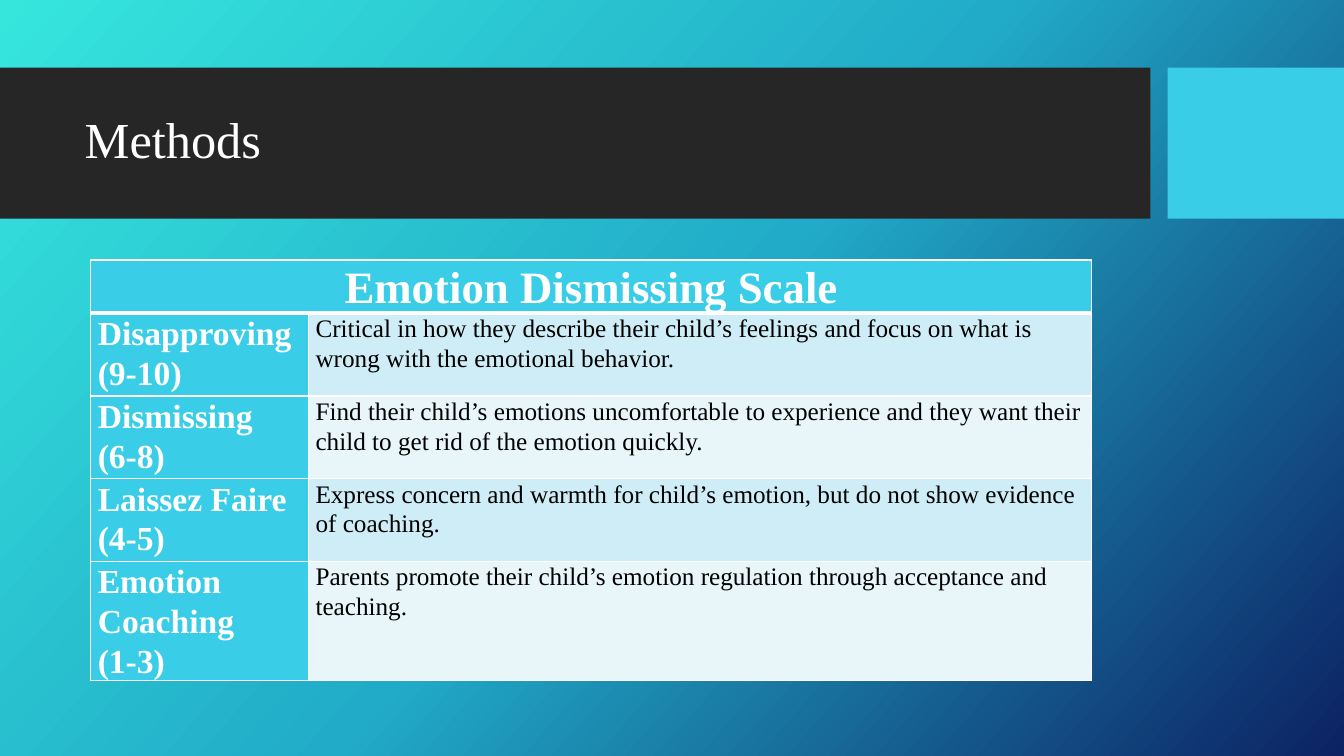
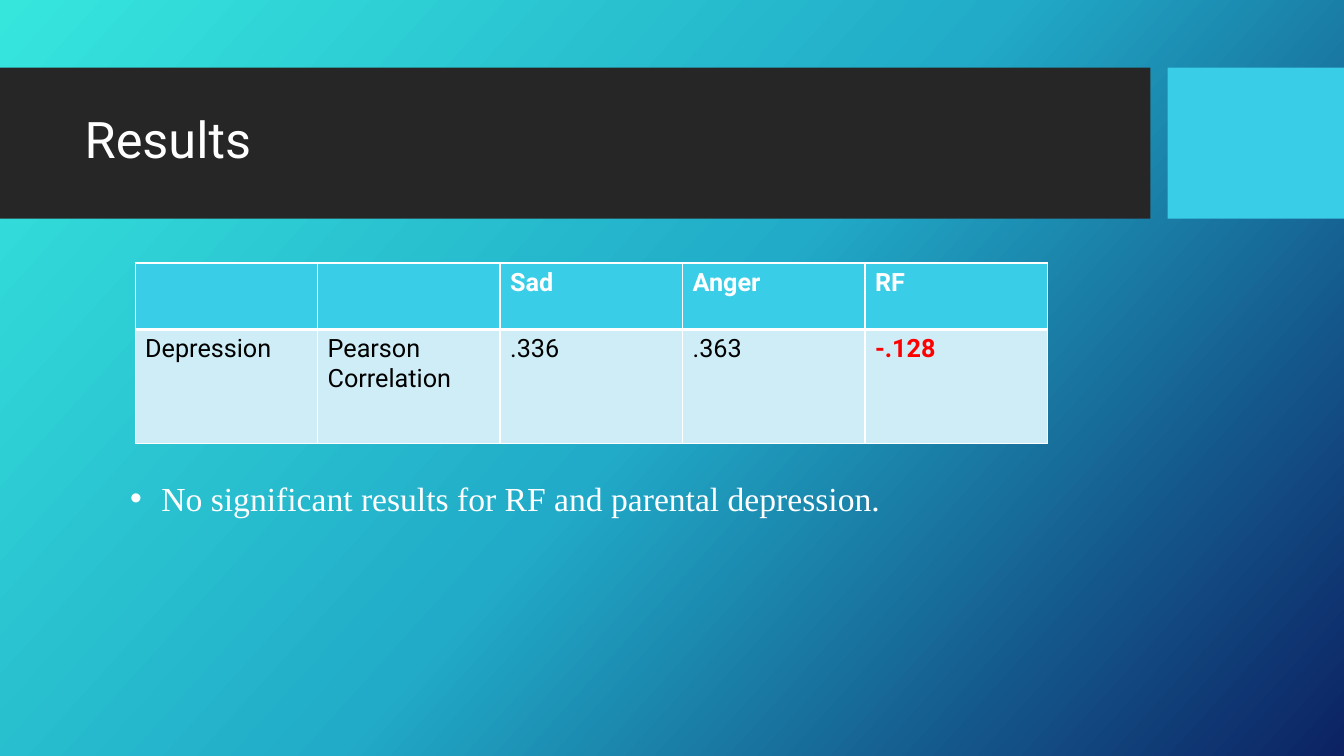
import copy
from dataclasses import dataclass
from typing import Any, Optional

import lxml.etree
import pptx
import pptx.dml.color
import pptx.enum.shapes
import pptx.enum.text
import pptx.oxml.ns
import pptx.util

Inches = pptx.util.Inches
qn = pptx.oxml.ns.qn

SERIF = "Times New Roman"
SANS = "Roboto"
WHITE = "FFFFFF"
BLACK = "000000"
RED = "FF0000"
CHARCOAL = "262626"
CYAN = "39CDE7"
ROW_TINTS = ("CEEDF6", "E8F6FA")
GRADIENT = ((0, "36E6DD"), (0.5, "21ABC8"), (1, "0C2263"))
GRADIENT_ANGLE = 42
TITLE_ONLY = 5
TITLE_AND_CONTENT = 1
THIN, THICK = 1, 3


@dataclass(frozen=True)
class Box:
    left: float
    top: float
    width: float
    height: float

    def lengths(self) -> tuple[int, ...]:
        return tuple(Inches(n) for n in (self.left, self.top, self.width, self.height))


@dataclass(frozen=True)
class Band:
    box: Box
    color: str


@dataclass(frozen=True)
class TextStyle:
    font: str
    size: float
    color: str
    bold: bool = False
    line_spacing: Optional[float] = None
    centered: bool = False


@dataclass(frozen=True)
class Cell:
    text: str
    style: TextStyle
    fill: str


@dataclass(frozen=True)
class Grid:
    box: Box
    columns: tuple[float, ...]
    rows: tuple[float, ...]
    cells: list[list[Cell]]
    margins: tuple[float, float] = (0.1, 0.05)
    merge_header: bool = False


BANDS = (
    Band(Box(0, 0.67, 11.41, 1.5), CHARCOAL),
    Band(Box(11.58, 0.67, 1.75, 1.5), CYAN),
)
TITLE_BOX = Box(0.74, 0.82, 10.51, 1.18)

SCALE_HEADER = TextStyle(SERIF, 32, WHITE, True, 1.07, True)
SCALE_LABEL = TextStyle(SERIF, 24, WHITE, True, 1.07)
SCALE_BODY = TextStyle(SERIF, 18, BLACK, line_spacing=1.07)
RESULT_HEADER = TextStyle(SANS, 18, WHITE, True)
RESULT_BODY = TextStyle(SANS, 18, BLACK)
RESULT_NEGATIVE = TextStyle(SANS, 18, RED, True)
FINDING = TextStyle(SERIF, 24, WHITE)

SCALE_LEVELS = (
    ("Disapproving\n(9-10)",
     "Critical in how they describe their child’s feelings and focus on what is "
     "wrong with the emotional behavior."),
    ("Dismissing\n(6-8)",
     "Find their child’s emotions uncomfortable to experience and they want their "
     "child to get rid of the emotion quickly."),
    ("Laissez Faire\n(4-5)",
     "Express concern and warmth for child’s emotion, but do not show evidence "
     "of coaching."),
    ("Emotion Coaching\n(1-3)",
     "Parents promote their child’s emotion regulation through acceptance and "
     "teaching."),
)
RESULT_COLUMNS = ("", "", "Sad", "Anger", "RF")
RESULT_VALUES = ("Depression", "Pearson Correlation", ".336", ".363", "-.128")


def rgb(color: str) -> pptx.dml.color.RGBColor:
    return pptx.dml.color.RGBColor.from_string(color)


def format_para(para: Any, style: TextStyle) -> None:
    align = pptx.enum.text.PP_ALIGN
    para.alignment = align.CENTER if style.centered else align.LEFT
    para.space_before = pptx.util.Pt(0)
    if style.line_spacing:
        para.line_spacing = style.line_spacing
    para.font.name = style.font
    para.font.size = pptx.util.Pt(style.size)
    para.font.bold = style.bold
    para.font.color.rgb = rgb(style.color)


def place(shape: Any, box: Box) -> None:
    shape.left, shape.top, shape.width, shape.height = box.lengths()


def paint_background(master: Any) -> None:
    fill = master.background.fill
    fill.gradient()
    fill.gradient_angle = 360 - GRADIENT_ANGLE
    stop_list = master.element.find(".//" + qn("a:gsLst"))
    stop_list.insert(1, copy.deepcopy(stop_list[0]))
    for stop, (position, color) in zip(fill.gradient_stops, GRADIENT):
        stop.position = position
        stop.color.rgb = rgb(color)


def move_bands_to_master(page: Any, master: Any) -> None:
    tree = master.shapes.element if hasattr(master.shapes, "element") else master.shapes._spTree
    for index, band in enumerate(BANDS):
        shape = page.shapes.add_shape(
            pptx.enum.shapes.MSO_SHAPE.RECTANGLE, *band.box.lengths())
        shape.shadow.inherit = False
        shape.fill.solid()
        shape.fill.fore_color.rgb = rgb(band.color)
        shape.line.fill.background()
        shape.element.nvSpPr.cNvPr.id = 20 + index
        tree.insert(2 + index, shape.element)


def add_page(deck: Any, layout: int, title: str, font: str) -> Any:
    page = deck.slides.add_slide(deck.slide_layouts[layout])
    heading = page.shapes.title
    place(heading, TITLE_BOX)
    frame = heading.text_frame
    frame.text = title
    frame.vertical_anchor = pptx.enum.text.MSO_ANCHOR.MIDDLE
    frame.auto_size = pptx.enum.text.MSO_AUTO_SIZE.NONE
    format_para(frame.paragraphs[0], TextStyle(font, 36, WHITE, line_spacing=0.9))
    return page


def set_borders(cell: Any, row: int) -> None:
    properties = cell._tc.get_or_add_tcPr()
    widths = {
        "L": THIN,
        "R": THIN,
        "T": THICK if row == 1 else THIN,
        "B": THICK if row == 0 else THIN,
    }
    for side, width in widths.items():
        line = lxml.etree.SubElement(
            properties, qn(f"a:ln{side}"), w=str(pptx.util.Pt(width)))
        solid = lxml.etree.SubElement(line, qn("a:solidFill"))
        lxml.etree.SubElement(solid, qn("a:srgbClr"), val=WHITE)


def fill_cell(target: Any, cell: Cell, row: int, margins: tuple[float, float]) -> None:
    set_borders(target, row)
    target.fill.solid()
    target.fill.fore_color.rgb = rgb(cell.fill)
    target.margin_left = target.margin_right = Inches(margins[0])
    target.margin_top = target.margin_bottom = Inches(margins[1])
    target.text = cell.text
    for para in target.text_frame.paragraphs:
        format_para(para, cell.style)


def add_grid(page: Any, grid: Grid) -> None:
    table = page.shapes.add_table(
        len(grid.rows), len(grid.columns), *grid.box.lengths()).table
    table.horz_banding = False
    for column, width in zip(table.columns, grid.columns):
        column.width = Inches(width)
    for row, height in zip(table.rows, grid.rows):
        row.height = Inches(height)
    for row, cells in enumerate(grid.cells):
        for column, cell in enumerate(cells):
            fill_cell(table.cell(row, column), cell, row, grid.margins)
    if grid.merge_header:
        table.cell(0, 0).merge(table.cell(0, len(grid.columns) - 1))


def add_finding(page: Any, text: str) -> None:
    body = page.placeholders[1]
    place(body, Box(1.19, 4.69, 9.2, 0.81))
    frame = body.text_frame
    frame.text = text
    frame.word_wrap = True
    frame.auto_size = pptx.enum.text.MSO_AUTO_SIZE.SHAPE_TO_FIT_TEXT
    para = frame.paragraphs[0]
    properties = para._p.get_or_add_pPr()
    properties.set("marL", str(Inches(0.31)))
    properties.set("indent", str(-Inches(0.31)))
    lxml.etree.SubElement(properties, qn("a:buFont"), typeface="Arial")
    lxml.etree.SubElement(properties, qn("a:buChar"), char="•")
    format_para(para, FINDING)


def scale_grid() -> Grid:
    cells = [[Cell("Emotion Dismissing Scale", SCALE_HEADER, CYAN),
              Cell("", SCALE_HEADER, CYAN)]]
    for index, (label, description) in enumerate(SCALE_LEVELS):
        tint = ROW_TINTS[index % len(ROW_TINTS)]
        cells.append([Cell(label, SCALE_LABEL, CYAN),
                      Cell(description, SCALE_BODY, tint)])
    return Grid(Box(0.9, 2.58, 9.93, 3.68), (2.16, 7.77),
                (0.4,) + (0.82,) * len(SCALE_LEVELS), cells, (0.07, 0), True)


def result_grid() -> Grid:
    header = [Cell(text, RESULT_HEADER, CYAN) for text in RESULT_COLUMNS]
    values = [
        Cell(text, RESULT_NEGATIVE if text.startswith("-") else RESULT_BODY, ROW_TINTS[0])
        for text in RESULT_VALUES
    ]
    return Grid(Box(1.34, 2.61, 9.05, 1.79), (1.81,) * len(RESULT_COLUMNS),
                (0.66, 1.13), [header, values])


def main() -> None:
    deck = pptx.Presentation()
    deck.slide_width, deck.slide_height = Inches(13.33), Inches(7.5)
    paint_background(deck.slide_master)

    methods = add_page(deck, TITLE_ONLY, "Methods", SERIF)
    move_bands_to_master(methods, deck.slide_master)
    add_grid(methods, scale_grid())

    results = add_page(deck, TITLE_AND_CONTENT, "Results", SANS)
    add_grid(results, result_grid())
    add_finding(results, "No significant results for RF and parental depression.")

    deck.save("out.pptx")


if __name__ == "__main__":
    main()
